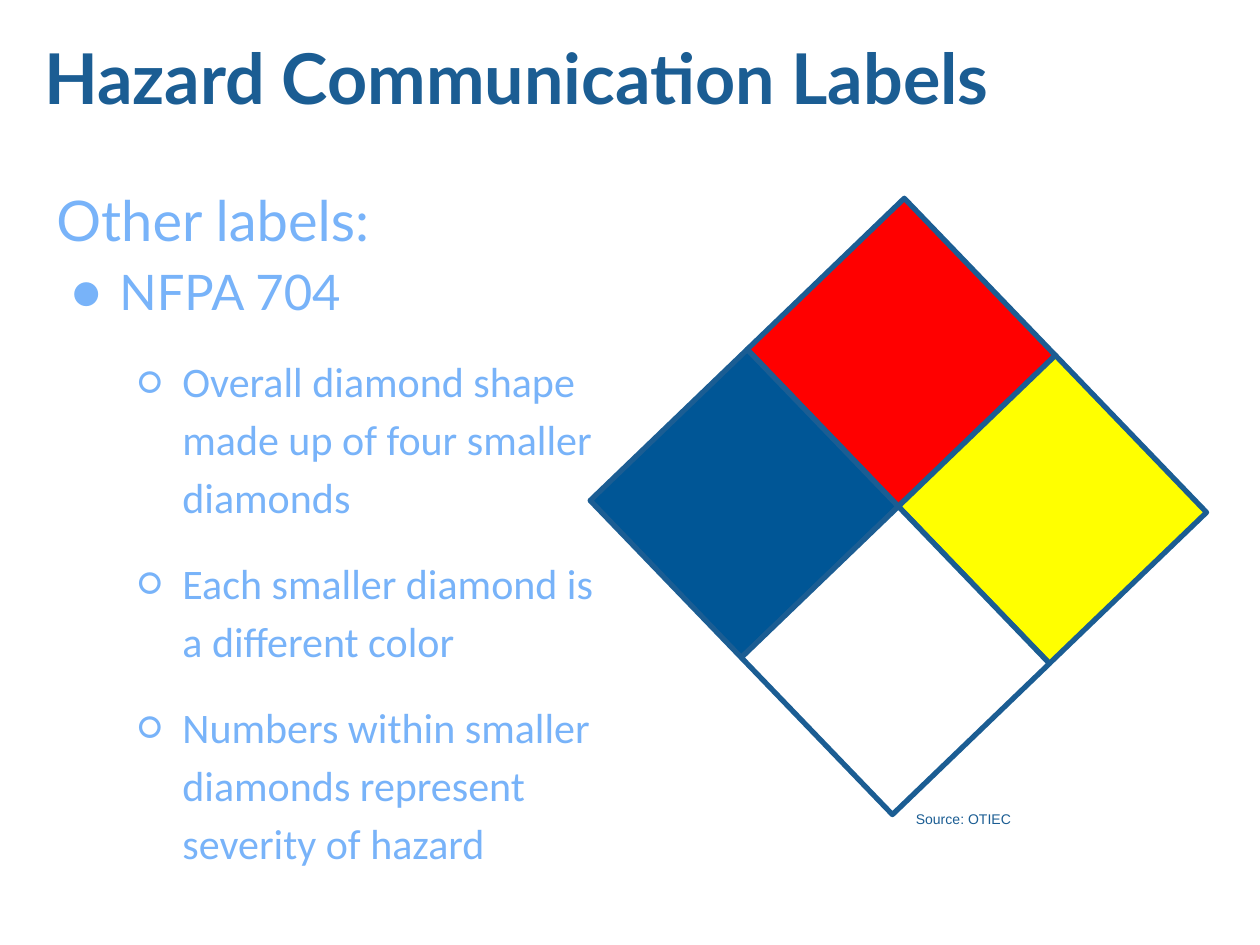
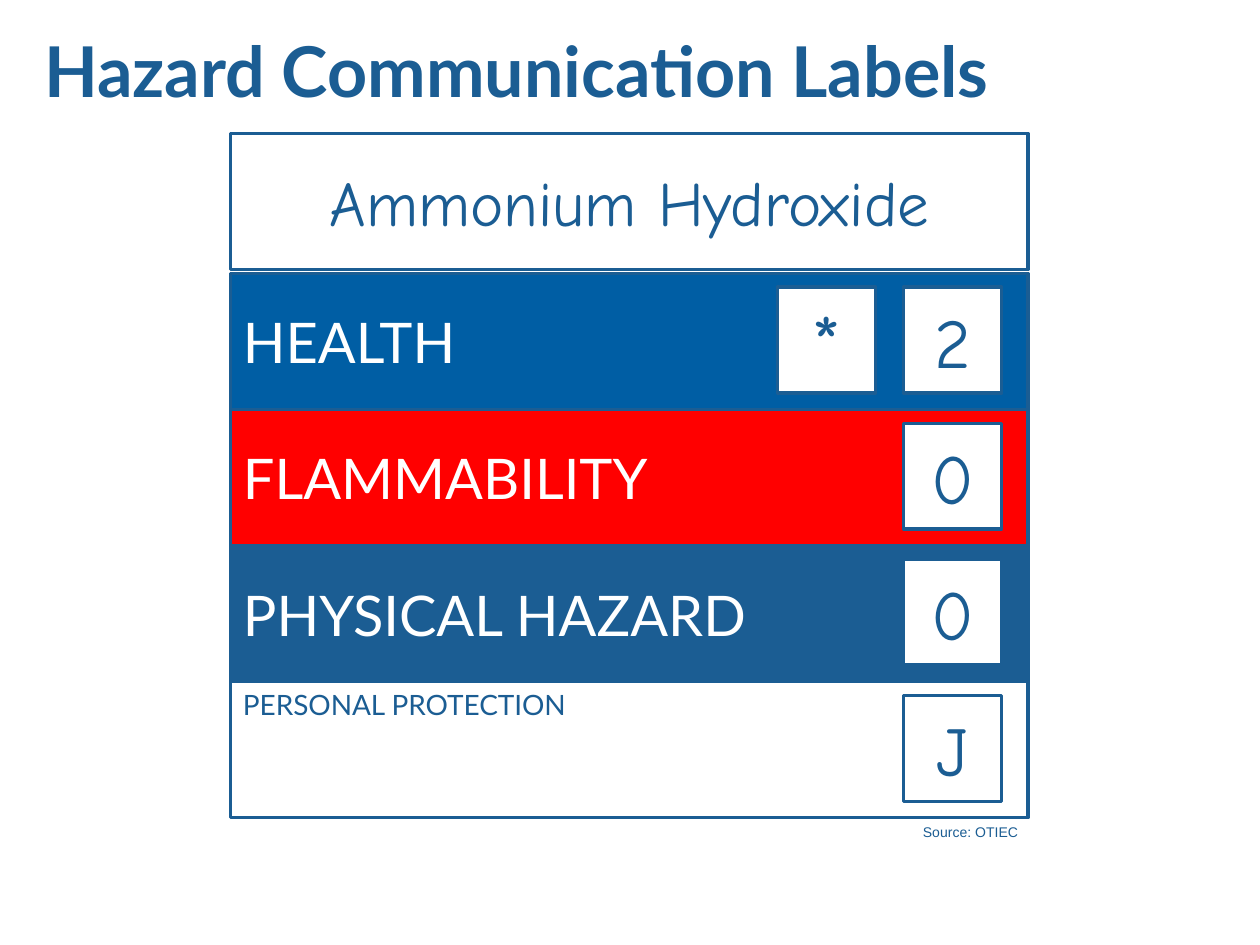
from math import cos, hypot, radians, sin

from lxml.etree import SubElement
from pptx import Presentation
from pptx.dml.color import RGBColor
from pptx.enum.shapes import MSO_SHAPE as SHAPE
from pptx.enum.text import MSO_ANCHOR as ANCHOR, MSO_AUTO_SIZE as AUTO_SIZE, PP_ALIGN as ALIGN
from pptx.oxml.ns import qn
from pptx.util import Inches, Pt

NAVY = RGBColor(0x1B, 0x5D, 0x93)
SKY = RGBColor(0x78, 0xB3, 0xF9)
DIAMOND_BLUE = RGBColor(0x00, 0x56, 0x96)
HEALTH_BLUE = RGBColor(0x00, 0x5E, 0xA4)
RED = RGBColor(0xFF, 0x00, 0x00)
YELLOW = RGBColor(0xFF, 0xFF, 0x00)
WHITE = RGBColor(0xFF, 0xFF, 0xFF)
HEADING_FONT, LIST_FONT, HAND_FONT, SOURCE_FONT = "Lato", "Calibri", "Comic Neue", "Arial"

TITLE = "Hazard Communication Labels"
SOURCE = "Source: OTIEC"

HEADING = dict(size=32, font=HEADING_FONT)
SYSTEM = dict(size=28, font=HEADING_FONT, bullet="●", indent=(0.5, -0.38))
DETAIL = dict(size=24, font=LIST_FONT, bullet="○", indent=(1, -0.35), level=1, before=16)
OUTLINE = [
    ("Other labels:", HEADING),
    ("NFPA 704", SYSTEM),
    ("Overall diamond shape made up of four smaller diamonds", DETAIL),
    ("Each smaller diamond is a different color", DETAIL),
    ("Numbers within smaller diamonds represent severity of hazard", DETAIL),
]

# Fill and direction (right, down) of each quarter before the diamond is turned
QUARTERS = [(RED, -1, -1), (YELLOW, 1, -1), (DIAMOND_BLUE, -1, 1), (WHITE, 1, 1)]
DIAMOND_CENTER = (7.13, 4.02)
QUARTER_SIDE, DIAMOND_TURN = 1.73, 46.1

CHEMICAL = "Ammonium Hydroxide"
HAZARD_ROWS = [
    ("HEALTH", HEALTH_BLUE, ["2", "*"]),
    ("FLAMMABILITY", RED, ["0"]),
    ("PHYSICAL HAZARD", NAVY, ["0"]),
    ("PERSONAL PROTECTION", WHITE, ["J"]),
]
LABEL_LEFT, LABEL_WIDTH, ROW_HEIGHT = 1.83, 6.33, 1.08
CHEMICAL_TOP, ROWS_TOP = 1.06, 2.17
RATING_LEFT, RATING_STEP, RATING_INSET = 7.17, 1.0, 0.11
RATING_WIDTH, RATING_HEIGHT = 0.78, 0.84


def write(paragraph, text, size=16, font=HEADING_FONT, color=NAVY, bold=False, align=ALIGN.LEFT,
          spacing=None, before=None, level=0, indent=None, bullet=None):
    """Fill one paragraph; indent is (left margin, first line) in inches."""
    run = paragraph.add_run()
    run.text = text
    run.font.size, run.font.name, run.font.bold = Pt(size), font, bold
    run.font.color.rgb = color
    paragraph.alignment, paragraph.level = align, level
    if spacing:
        paragraph.line_spacing = spacing
    if before:
        paragraph.space_before = Pt(before)
    properties = paragraph._p.get_or_add_pPr()
    if indent:
        for name, length in zip(("marL", "indent"), indent):
            properties.set(name, str(Inches(length)))
    if bullet:
        bullet_color = SubElement(properties, qn("a:buClr"))
        SubElement(bullet_color, qn("a:srgbClr"), val=str(color))
        SubElement(properties, qn("a:buFont"), typeface=font)
        SubElement(properties, qn("a:buChar"), char=bullet)


def set_insets(frame, inset):
    frame.margin_left = frame.margin_right = Inches(inset)
    frame.margin_top = frame.margin_bottom = Inches(inset)


def add_titled_slide(deck, top):
    slide = deck.slides.add_slide(deck.slide_layouts[5])
    title = slide.shapes.title
    title.left, title.top, title.width, title.height = map(Inches, (0.25, top, 9.5, 0.92))
    frame = title.text_frame
    frame.auto_size, frame.vertical_anchor = AUTO_SIZE.NONE, ANCHOR.TOP
    set_insets(frame, 0.1)
    write(frame.paragraphs[0], TITLE, size=40, bold=True)
    return slide


def add_text_box(slide, left, top, width, height):
    frame = slide.shapes.add_textbox(*map(Inches, (left, top, width, height))).text_frame
    frame.word_wrap = True
    return frame


def add_source(slide, left, top, width, align):
    frame = add_text_box(slide, left, top, width, 0.24)
    frame.auto_size = AUTO_SIZE.SHAPE_TO_FIT_TEXT
    write(frame.paragraphs[0], SOURCE, size=8, font=SOURCE_FONT, align=align)


def add_panel(slide, left, top, width, height, fill, line=2, text="", anchor=ANCHOR.MIDDLE,
              **text_format):
    panel = slide.shapes.add_shape(SHAPE.RECTANGLE, *map(Inches, (left, top, width, height)))
    panel.shadow.inherit = False
    panel.fill.solid()
    panel.fill.fore_color.rgb = fill
    panel.line.color.rgb, panel.line.width = NAVY, Pt(line)
    if text:
        panel.text_frame.vertical_anchor = anchor
        write(panel.text_frame.paragraphs[0], text, **text_format)
    return panel


def add_diamond(slide):
    center_x, center_y = DIAMOND_CENTER
    turn, half = radians(DIAMOND_TURN), QUARTER_SIDE / 2
    for fill, right, down in QUARTERS:
        x = center_x + half * (right * cos(turn) - down * sin(turn))
        y = center_y + half * (right * sin(turn) + down * cos(turn))
        quarter = add_panel(slide, x - half, y - half, QUARTER_SIDE, QUARTER_SIDE, fill, line=3)
        quarter.rotation = DIAMOND_TURN


def build_diamond_slide(deck):
    slide = add_titled_slide(deck, 0.17)
    frame = add_text_box(slide, 0.35, 1.29, 4.57, 4.92)
    set_insets(frame, 0.1)
    for number, (text, text_format) in enumerate(OUTLINE):
        paragraph = frame.add_paragraph() if number else frame.paragraphs[0]
        write(paragraph, text, color=SKY, spacing=1.15, **text_format)
    add_diamond(slide)
    add_source(slide, 7.17, 6.38, 1.56, ALIGN.LEFT)


def build_rating_slide(deck):
    slide = add_titled_slide(deck, 0.12)
    add_source(slide, 7.01, 6.49, 1.17, ALIGN.RIGHT)
    for number, (hazard, fill, ratings) in enumerate(HAZARD_ROWS):
        top = ROWS_TOP + number * ROW_HEIGHT
        if fill == WHITE:
            look = dict(size=16, color=NAVY, anchor=ANCHOR.TOP)
        else:
            look = dict(size=32, color=WHITE)
        add_panel(slide, LABEL_LEFT, top, LABEL_WIDTH, ROW_HEIGHT, fill, text=hazard, **look)
        for place, rating in enumerate(ratings):
            add_panel(slide, RATING_LEFT - place * RATING_STEP, top + RATING_INSET,
                      RATING_WIDTH, RATING_HEIGHT, WHITE, text=rating,
                      size=44 if rating == "*" else 40, font=HAND_FONT, align=ALIGN.CENTER)
    add_panel(slide, LABEL_LEFT, CHEMICAL_TOP, LABEL_WIDTH, ROW_HEIGHT, WHITE, text=CHEMICAL,
              size=36, font=HAND_FONT, align=ALIGN.CENTER)


def main():
    deck = Presentation()
    deck.slide_width, deck.slide_height = Inches(10), Inches(7.5)
    build_diamond_slide(deck)
    build_rating_slide(deck)
    deck.save("out.pptx")


if __name__ == "__main__":
    main()
